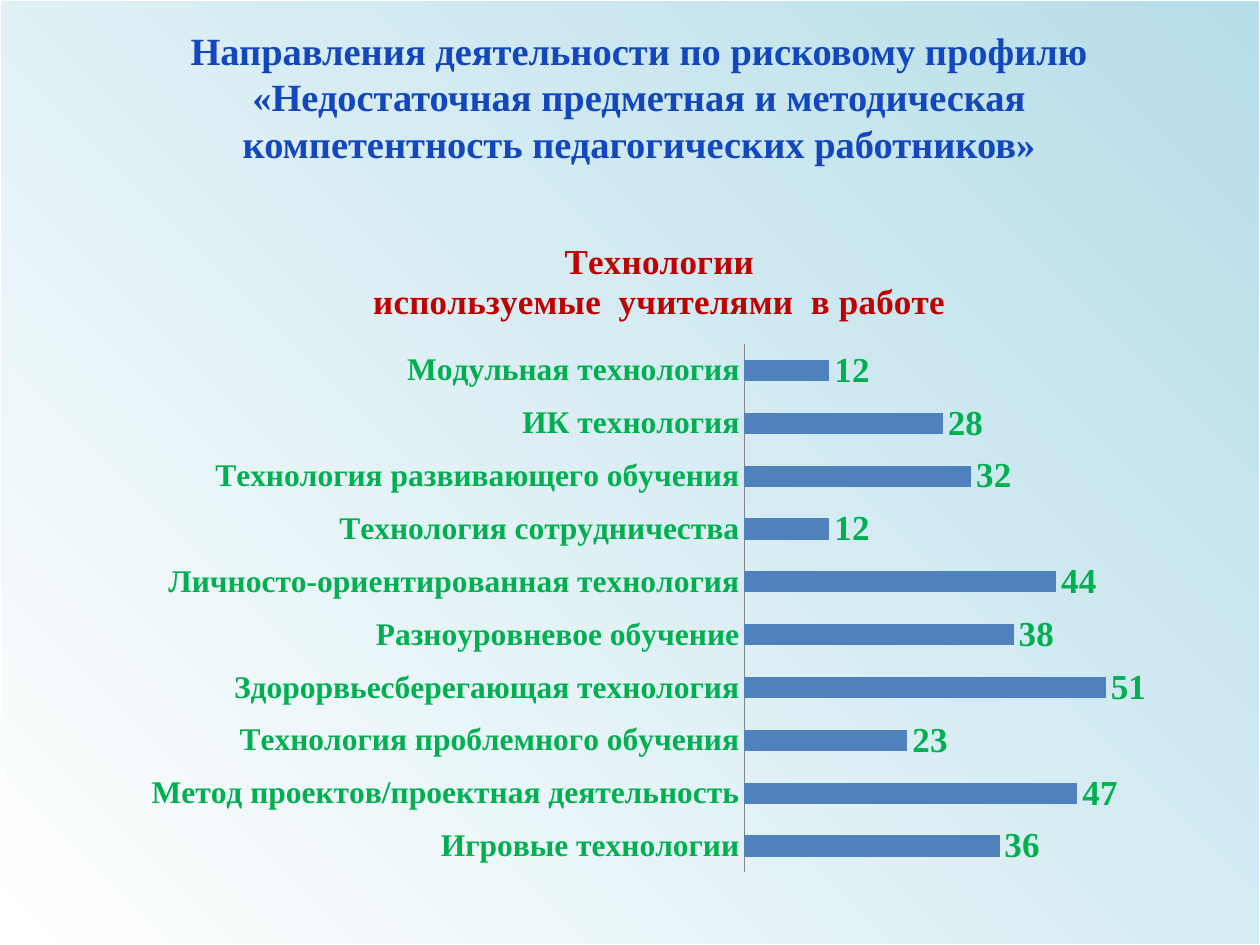
from lxml.etree import SubElement
from pptx import Presentation
from pptx.chart.data import CategoryChartData
from pptx.dml.color import RGBColor
from pptx.enum.chart import XL_CHART_TYPE as Kind, XL_LABEL_POSITION as Pos
from pptx.enum.chart import XL_TICK_MARK as Tick
from pptx.enum.shapes import MSO_SHAPE as Form
from pptx.enum.text import MSO_ANCHOR as Anchor, MSO_AUTO_SIZE as Fit, PP_ALIGN as Align
from pptx.oxml.ns import qn
from pptx.util import Emu, Pt

PX = 914400 // 126
WIDTH, HEIGHT = 1260, 945
BLUE, RED, GREEN, BAR, GRAY = "1247BE", "C00000", "00B050", "4F81BD", "868686"

HEAD = ("Направления деятельности по рисковому профилю\v"
        "«Недостаточная предметная и методическая компетентность педагогических работников»")
CAPTION = ["Технологии", "используемые  учителями  в работе"]
COUNTS = {
    "Игровые технологии": 36,
    "Метод проектов/проектная деятельность": 47,
    "Технология проблемного обучения": 23,
    "Здорорвьесберегающая технология": 51,
    "Разноуровневое обучение": 38,
    "Личносто-ориентированная технология": 44,
    "Технология сотрудничества": 12,
    "Технология развивающего обучения": 32,
    "ИК технология": 28,
    "Модульная технология": 12,
}


def px(*nums):
    return [Emu(n * PX) for n in nums]


def color(code):
    return RGBColor.from_string(code)


def style(font, size, code):
    font.name, font.size, font.bold = "Times New Roman", Pt(size), True
    font.color.rgb = color(code)


def write(frame, lines, size, code, align=Align.CENTER):
    for i, line in enumerate(lines):
        para = frame.add_paragraph() if i else frame.paragraphs[0]
        para.text, para.alignment = line, align
        for run in para.runs:
            style(run.font, size, code)


def add_back(slide, box):
    rect = slide.shapes.add_shape(Form.RECTANGLE, *px(*box))
    rect.shadow.inherit = False
    rect.fill.gradient()
    rect.fill.gradient_angle = 45
    for stop, code, place in zip(rect.fill.gradient_stops, ("FFFFFF", "B6DDE8"), (0, 1)):
        stop.color.rgb, stop.position = color(code), place
    rect.line.color.rgb = color("FFFFFF")
    rect.line.width = Pt(0.75)
    # Behind the title placeholder
    slide.shapes[0].element.addprevious(rect.element)


def add_head(slide, box):
    title = slide.shapes.title
    title.left, title.top, title.width, title.height = px(*box)
    frame = title.text_frame
    frame.word_wrap, frame.auto_size = True, Fit.NONE
    frame.vertical_anchor = Anchor.MIDDLE
    write(frame, [HEAD], 22, BLUE)


def set_plot(chart, **parts):
    """Fix the inner plot area as fractions of the chart."""
    area = chart.element.find(".//" + qn("c:plotArea"))
    layout = area.find(qn("c:layout"))
    if layout is None:
        layout = SubElement(area, qn("c:layout"))
        area.insert(0, layout)
    manual = SubElement(layout, qn("c:manualLayout"))
    SubElement(manual, qn("c:layoutTarget")).set("val", "inner")
    for mode in ("xMode", "yMode"):
        SubElement(manual, qn("c:" + mode)).set("val", "edge")
    for name, part in parts.items():
        SubElement(manual, qn("c:" + name)).set("val", str(part))


def add_bars(slide, box):
    data = CategoryChartData()
    data.categories = list(COUNTS)
    data.add_series("Series 1", list(COUNTS.values()))
    chart = slide.shapes.add_chart(Kind.BAR_CLUSTERED, *px(*box), data).chart
    chart.font.name, chart.font.size = "Calibri", Pt(10)
    chart.has_legend = False
    chart.has_title = True
    write(chart.chart_title.text_frame, CAPTION, 20, RED)
    chart.chart_title.include_in_layout = False
    set_plot(chart, x=0.58, y=0.19, w=0.4, h=0.79)

    names, scale = chart.category_axis, chart.value_axis
    names.major_tick_mark = names.minor_tick_mark = Tick.NONE
    names.has_major_gridlines = False
    names.format.line.color.rgb = color(GRAY)
    style(names.tick_labels.font, 18, GREEN)
    scale.visible = scale.has_major_gridlines = False
    scale.minimum_scale, scale.maximum_scale = 0, 60

    plot = chart.plots[0]
    plot.gap_width, plot.overlap, plot.vary_by_categories = 150, -25, False
    fill = plot.series[0].format.fill
    fill.solid()
    fill.fore_color.rgb = color(BAR)
    plot.has_data_labels = True
    labels = plot.data_labels
    labels.show_value, labels.position = True, Pos.OUTSIDE_END
    style(labels.font, 20, GREEN)


def main():
    deck = Presentation()
    deck.slide_width, deck.slide_height = px(WIDTH, HEIGHT)
    slide = deck.slides.add_slide(deck.slide_layouts[5])
    add_back(slide, (0, 0, WIDTH, HEIGHT))
    add_head(slide, (137, 18, 1004, 157))
    add_bars(slide, (128, 217, 1063, 669))
    deck.save("out.pptx")


if __name__ == "__main__":
    main()
